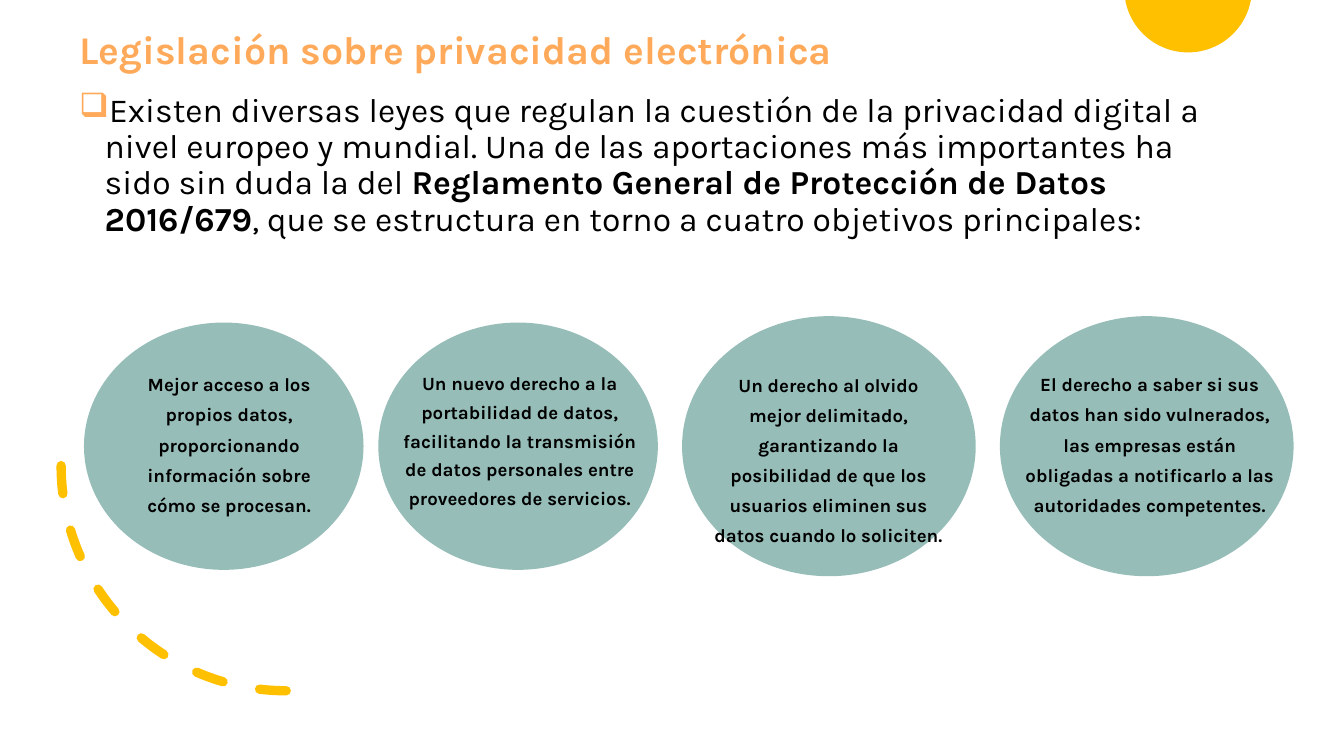
import math
from dataclasses import dataclass
from pptx import Presentation
from pptx import util as u
from pptx.dml.color import RGBColor
from pptx.enum import dml, shapes, text
from pptx.oxml import ns
from lxml import etree


@dataclass(frozen=True)
class Theme:
    font: str = "Karla"
    gold: str = "FFC000"
    peach: str = "FFAA5A"
    teal: str = "96BDB8"
    ink: str = "000000"
    head: int = 42
    body: int = 36
    goal: int = 20


T = Theme()
PX = 9144
TITLE = "Legislación sobre privacidad electrónica"
INTRO = [
    ("Existen diversas leyes que regulan la cuestión de la privacidad digital a nivel europeo y mundial. "
     "Una de las aportaciones más importantes ha sido sin duda la del ", False),
    ("Reglamento General de Protección de Datos 2016/679", True),
    (", que se estructura en torno a cuatro objetivos principales:", False),
]
SMALL, LARGE = (416, 368), (437, 387)
MID = 664
GOALS = [
    ("Mejor acceso a los propios datos, proporcionando información sobre cómo se procesan.",
     125, SMALL, (208, 544, 266, 221), 32.2),
    ("Un nuevo derecho a la portabilidad de datos, facilitando la transmisión de datos personales "
     "entre proveedores de servicios.",
     563, SMALL, (598, 544, 351, 214), 30.8),
    ("Un derecho al olvido mejor delimitado, garantizando la posibilidad de que los usuarios "
     "eliminen sus datos cuando lo soliciten.",
     1015, LARGE, (1061, 545, 344, 221), 32.2),
    ("El derecho a saber si sus datos han sido vulnerados, las empresas están obligadas a "
     "notificarlo a las autoridades competentes.",
     1488, LARGE, (1521, 544, 380, 221), 32.2),
]


def emu(*vals):
    return [u.Emu(round(v * PX)) for v in vals]


def rgb(code):
    return RGBColor.from_string(code)


def paint(shape, color):
    shape.shadow.inherit = False
    shape.fill.solid()
    shape.fill.fore_color.rgb = rgb(color)
    shape.line.fill.background()


def write(shape, runs, size, color=T.ink, align=text.PP_ALIGN.LEFT, lead=0.9, inset=None, grow=False):
    frame = shape.text_frame
    frame.word_wrap = True
    frame.vertical_anchor = text.MSO_ANCHOR.TOP
    fit = text.MSO_AUTO_SIZE
    frame.auto_size = fit.SHAPE_TO_FIT_TEXT if grow else fit.NONE
    if inset is not None:
        frame.margin_left = frame.margin_right = frame.margin_top = frame.margin_bottom = inset
    para = frame.paragraphs[0]
    para.alignment, para.line_spacing = align, lead
    para.space_before = para.space_after = u.Pt(0)
    for words, bold in runs:
        run = para.add_run()
        run.text = words
        font = run.font
        font.name, font.size, font.bold = T.font, u.Pt(size), bold
        font.color.rgb = rgb(color)
    return para


def bullet(para, mark, color, indent):
    props = para._p.get_or_add_pPr()
    props.set("marL", str(indent * PX))
    props.set("indent", str(-indent * PX))
    tint = etree.SubElement(props, ns.qn("a:buClr"))
    etree.SubElement(tint, ns.qn("a:srgbClr"), val=color)
    etree.SubElement(props, ns.qn("a:buChar"), char=mark)


def add_sun(tree, x, y, radius):
    edge = math.asin(-y / radius)
    steps = 60
    turns = [edge + (math.pi - 2 * edge) * i / steps for i in range(steps + 1)]
    points = [emu(x + radius * math.cos(a), max(0, y + radius * math.sin(a))) for a in turns]
    build = tree.build_freeform(*points[0])
    build.add_line_segments(points[1:], close=True)
    paint(build.convert_to_shape(), T.gold)


def add_arc(tree, x, y, size):
    arc = tree.add_shape(shapes.MSO_SHAPE.ARC, *emu(x, y, size, size))
    arc.shadow.inherit = False
    arc.fill.background()
    arc.rotation = 90
    arc.line.color.rgb = rgb(T.gold)
    arc.line.width = u.Pt(10)
    arc.line.dash_style = dml.MSO_LINE.DASH
    props = arc.element.spPr
    props.find(ns.qn("a:xfrm")).set("flipV", "1")
    props.find(ns.qn("a:ln")).set("cap", "rnd")


def main():
    deck = Presentation()
    deck.slide_width, deck.slide_height = emu(2000, 1125)
    slide = deck.slides.add_slide(deck.slide_layouts[5])
    tree = slide.shapes

    add_sun(tree, 1768, -17, 95)
    add_arc(tree, 91, 358, 670)

    title = tree.title
    title.left, title.top, title.width, title.height = emu(108, 40, 1725, 80)
    write(title, [(TITLE, True)], T.head, T.peach)

    intro = tree.add_textbox(*emu(108, 134, 1725, 296))
    bullet(write(intro, INTRO, T.body), "❑", T.peach, 38)

    for words, left, (wide, high), box, lead in GOALS:
        oval = tree.add_shape(shapes.MSO_SHAPE.OVAL, *emu(left, MID - high / 2, wide, high))
        paint(oval, T.teal)
        label = tree.add_textbox(*emu(*box))
        write(label, [(words, True)], T.goal, align=text.PP_ALIGN.CENTER,
              lead=u.Pt(lead), inset=0, grow=True)

    deck.save("out.pptx")


if __name__ == "__main__":
    main()
